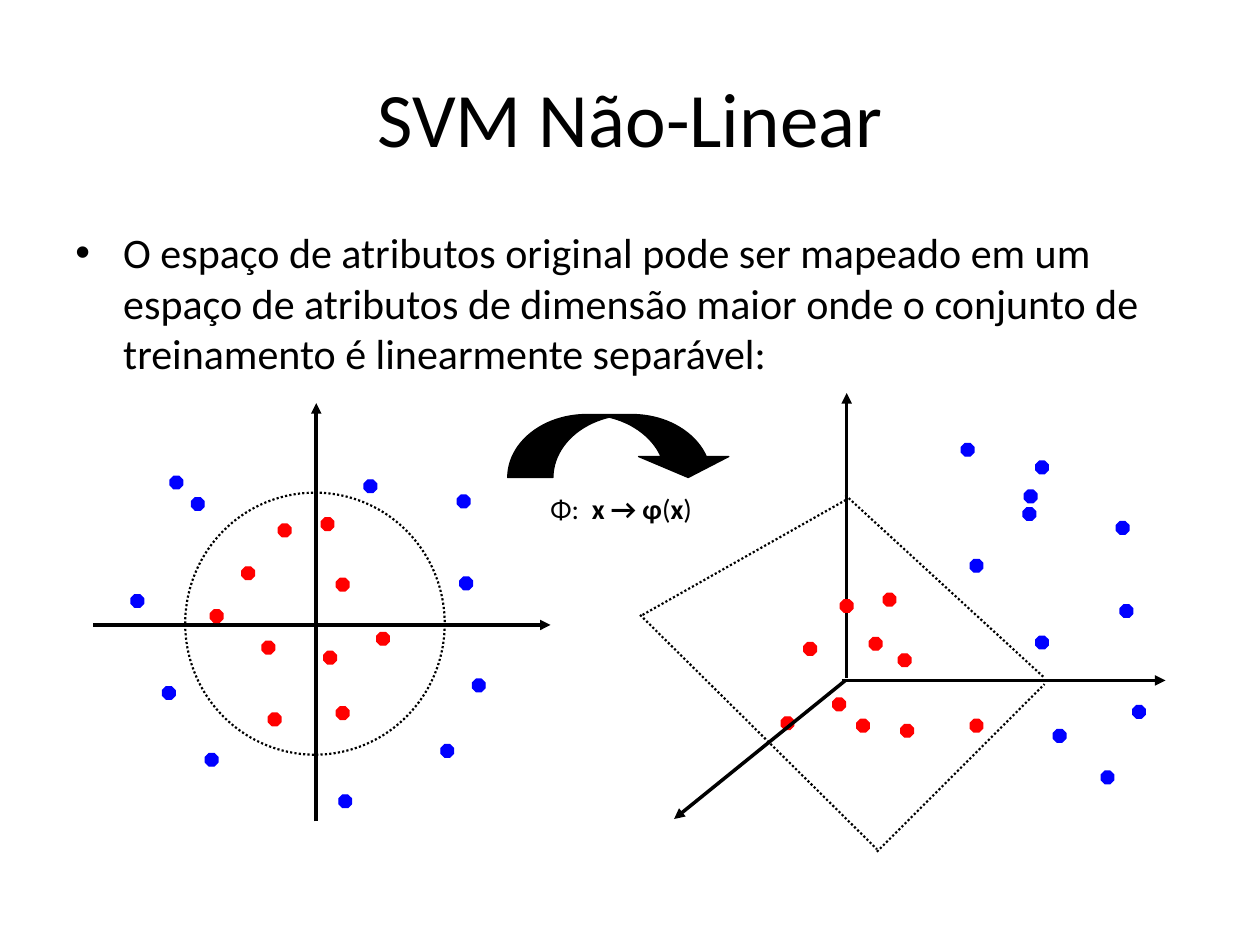
import pptx
import pptx.util
import pptx.dml.color
import pptx.enum.dml
import pptx.enum.shapes
import pptx.enum.text
import pptx.oxml.ns
from lxml import etree

BLACK = pptx.dml.color.RGBColor(0, 0, 0)
RED = pptx.dml.color.RGBColor(255, 0, 0)
BLUE = pptx.dml.color.RGBColor(0, 0, 255)

SHAPE = pptx.enum.shapes.MSO_SHAPE
ALIGN = pptx.enum.text.PP_ALIGN
ANCHOR = pptx.enum.text.MSO_ANCHOR
COLUMNS, ROWS = 100, 75
DOT_SIZE = 1

# Top left corners of the dots, in grid columns and rows
PLANE_INSIDE = [
    (25.5, 41.1), (19.2, 45), (20.8, 50.9), (26.7, 56.1), (22.1, 41.6),
    (16.7, 48.4), (21.3, 56.6), (26.7, 45.9), (29.9, 50.2), (25.7, 51.7),
]
PLANE_OUTSIDE = [
    (36.5, 45.8), (35, 59.1), (10.4, 47.2), (26.9, 63.1), (37.5, 53.9), (16.3, 59.8),
    (12.9, 54.5), (13.5, 37.8), (28.9, 38.1), (15.2, 39.5), (36.3, 39.3),
]
SPACE_INSIDE = [
    (70.1, 47.1), (63.8, 51), (68, 57.1), (77, 57.1), (66.7, 47.6),
    (69, 50.6), (71.5, 57.5), (71.3, 51.9), (66.1, 55.4), (62, 56.9),
]
SPACE_OUTSIDE = [
    (88.9, 48), (87.4, 61.2), (82.2, 36.6), (82.2, 50.5), (89.9, 56), (77, 44.4),
    (83.6, 57.9), (81.3, 38.9), (81.2, 40.3), (76.3, 35.2), (88.6, 41.4),
]
SEPARATING_PLANE = [
    ((67.1, 39.3), (82.9, 53.8)),
    ((69.6, 67.6), (82.9, 54.3)),
    ((51, 48.8), (67.1, 39.7)),
    ((50.8, 48.8), (69.6, 67.4)),
]


class SlideBuilder:
    """Draws elements in one style, measured in grid columns and rows."""

    font_name = "Calibri"
    axis_width = 2
    dotted_width = 1.25
    outline_width = 0.75

    def __init__(self, deck):
        self.page = deck.slides.add_slide(deck.slide_layouts[5])
        self.column = deck.slide_width / COLUMNS
        self.row = deck.slide_height / ROWS

    def scale(self, *lengths):
        """Turn alternating columns and rows into slide units."""
        units = (self.column, self.row) * (len(lengths) // 2)
        return [round(length * unit) for length, unit in zip(lengths, units)]

    def format_font(self, para, size):
        para.font.name = self.font_name
        para.font.size = pptx.util.Pt(size)
        para.font.color.rgb = BLACK

    def title(self, text, *area):
        box = self.page.shapes.title
        box.left, box.top, box.width, box.height = self.scale(*area)
        box.text_frame.text = text
        box.text_frame.vertical_anchor = ANCHOR.MIDDLE
        para = box.text_frame.paragraphs[0]
        para.alignment = ALIGN.CENTER
        self.format_font(para, 44)

    def text_box(self, *area):
        """Add an empty wrapping box and return its first paragraph."""
        box = self.page.shapes.add_textbox(*self.scale(*area))
        box.text_frame.word_wrap = True
        return box.text_frame.paragraphs[0]

    def bullet(self, text, *area):
        para = self.text_box(*area)
        para.text = text
        indent = pptx.util.Inches(0.38)
        properties = para._p.get_or_add_pPr()
        properties.set("marL", str(indent))
        properties.set("indent", str(-indent))
        font = etree.SubElement(properties, pptx.oxml.ns.qn("a:buFont"))
        font.set("typeface", "Arial")
        mark = etree.SubElement(properties, pptx.oxml.ns.qn("a:buChar"))
        mark.set("char", "•")
        self.format_font(para, 24)

    def formula(self, parts, *area):
        """Write centred (text, bold) parts on one line."""
        para = self.text_box(*area)
        para.alignment = ALIGN.CENTER
        self.format_font(para, 16)
        for text, bold in parts:
            span = para.add_run()
            span.text = text
            span.font.bold = bold

    def shape(self, kind, area, color=None):
        """Add a shape filled with color, or a dotted outline without one."""
        shape = self.page.shapes.add_shape(kind, *self.scale(*area))
        shape.shadow.inherit = False
        if color is None:
            shape.fill.background()
            self.dot_line(shape.line)
        else:
            shape.fill.solid()
            shape.fill.fore_color.rgb = color
            shape.line.color.rgb = color
            shape.line.width = pptx.util.Pt(self.outline_width)
        return shape

    def dots(self, corners, color):
        for left, top in corners:
            self.shape(SHAPE.OCTAGON, (left, top, DOT_SIZE, DOT_SIZE), color)

    def dot_line(self, line):
        line.color.rgb = BLACK
        line.width = pptx.util.Pt(self.dotted_width)
        line.dash_style = pptx.enum.dml.MSO_LINE.ROUND_DOT

    def connector(self, start, end):
        straight = pptx.enum.shapes.MSO_CONNECTOR.STRAIGHT
        link = self.page.shapes.add_connector(straight, *self.scale(*start, *end))
        etree.SubElement(link._element.spPr, pptx.oxml.ns.qn("a:effectLst"))
        return link

    def axis(self, start, end):
        line = self.connector(start, end).line
        line.color.rgb = BLACK
        line.width = pptx.util.Pt(self.axis_width)
        head = etree.SubElement(line._get_or_add_ln(), pptx.oxml.ns.qn("a:tailEnd"))
        head.set("type", "triangle")

    def dotted_line(self, start, end):
        self.dot_line(self.connector(start, end).line)


def main():
    deck = pptx.Presentation()
    deck.slide_width = pptx.util.Inches(10)
    deck.slide_height = pptx.util.Inches(7.5)
    builder = SlideBuilder(deck)

    builder.title("SVM Não-Linear", 5, 3, 90, 12.5)
    builder.bullet(
        "O espaço de atributos original pode ser mapeado em um espaço de atributos "
        "de dimensão maior onde o conjunto de treinamento é linearmente separável:",
        5, 17.5, 90, 49.5,
    )

    builder.axis((25.1, 65.2), (25.1, 32))
    builder.axis((7.4, 49.6), (43.7, 49.6))
    builder.dots(PLANE_INSIDE, RED)
    builder.dots(PLANE_OUTSIDE, BLUE)
    builder.shape(SHAPE.OVAL, (14.7, 39.1, 20.6, 20.8))

    builder.axis((67.2, 53.8), (67.2, 31.2))
    builder.axis((66.8, 54), (92.5, 54))
    builder.dots(SPACE_INSIDE, RED)
    builder.dots(SPACE_OUTSIDE, BLUE)
    builder.axis((67.1, 54), (53.5, 65))
    for start, end in SEPARATING_PLANE:
        builder.dotted_line(start, end)

    arrow = builder.shape(SHAPE.CURVED_DOWN_ARROW, (40.3, 32.9, 17.9, 5), BLACK)
    for index, value in enumerate((0.717, 1.433, 0.333)):
        arrow.adjustments[index] = value
    builder.formula(
        [("Φ:  ", False), ("x → φ", True), ("(", False), ("x", True), (")", False)],
        38.4, 38.5, 21.8, 3.7,
    )

    deck.save("out.pptx")


if __name__ == "__main__":
    main()
